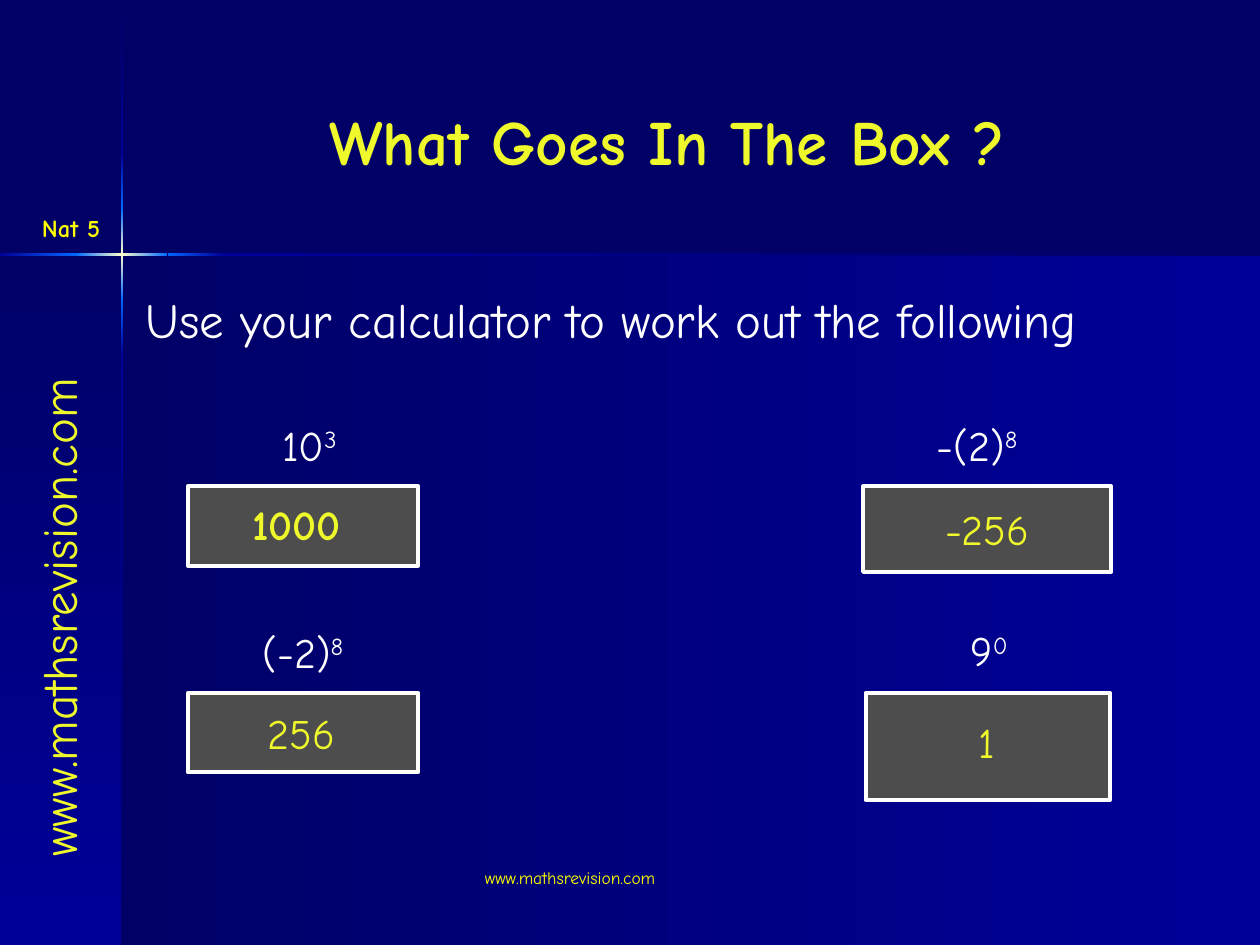
from copy import deepcopy

from pptx import Presentation, util as u
from pptx.dml.color import RGBColor
from pptx.enum import shapes, text
from pptx.oxml import ns

NAVY = RGBColor(0x00, 0x00, 0x66)
BLUE = RGBColor(0x00, 0x00, 0x99)
BRIGHT = RGBColor(0x00, 0x66, 0xFF)
CREAM = RGBColor(0xFF, 0xFF, 0xCC)
LEMON = RGBColor(0xEE, 0xF8, 0x2A)
YELLOW = RGBColor(0xFF, 0xFF, 0x00)
WHITE = RGBColor(0xFF, 0xFF, 0xFF)
GREY = RGBColor(0x4D, 0x4D, 0x4D)
ADDRESS = "www.mathsrevision.com"

deck = Presentation()
deck.slide_width, deck.slide_height = u.Inches(10), u.Inches(7.5)
page = deck.slides.add_slide(deck.slide_layouts[5])
page.background.fill.solid()
page.background.fill.fore_color.rgb = NAVY
CELL = deck.slide_width // 100  # grid of 100 columns by 75 rows


def place(*cells):
    return [round(cell * CELL) for cell in cells]


def write(words, cells=None, box=None, size=24, color=WHITE, bold=False,
          align=text.PP_ALIGN.CENTER, power=None):
    """Put a line of text, with an optional exponent, in a box."""
    box = box or page.shapes.add_textbox(*place(*cells))
    box.text_frame.word_wrap = True
    para = box.text_frame.paragraphs[0]
    para.alignment = align
    for part in filter(None, (words, power)):
        span = para.add_run()
        span.text = part
        span.font.name, span.font.size = "Comic Neue", u.Pt(size)
        span.font.bold, span.font.color.rgb = bold, color
        if part is power:
            span.font._element.set("baseline", "30000")
    return box


# Background panels, then the glowing cross; angles run counter-clockwise
RIGHT, DOWN = 0, 270
CROSS_X, CROSS_Y, THIN = 9.6, 20.1, 0.2
bands = [
    ((9.7, 20.2, 90.3, 54.8), RIGHT, (NAVY, BLUE)),
    ((0, 20.2, 9.7, 54.8), DOWN, (NAVY, BLUE)),
    ((CROSS_X, 0.1, THIN, 12), DOWN, (NAVY, BLUE)),
    ((CROSS_X, 28.2, THIN, 46.8), DOWN, (BLUE, NAVY)),
    ((17.7, CROSS_Y, 82.3, THIN), RIGHT, (BLUE, NAVY)),
    ((CROSS_X, 23.8, THIN, 4.4), DOWN, (BRIGHT, BLUE)),
    ((CROSS_X, 12.1, THIN, 4.4), DOWN, (BLUE, BRIGHT)),
    ((CROSS_X, 16.5, THIN, 7.3), DOWN, (BRIGHT, CREAM, BRIGHT)),
    ((0, CROSS_Y, 6.1, THIN), RIGHT, (BLUE, BRIGHT)),
    ((13.3, CROSS_Y, 4.4, THIN), RIGHT, (BRIGHT, BLUE)),
    ((6, CROSS_Y, 7.3, THIN), RIGHT, (BRIGHT, CREAM, BRIGHT)),
]
for cells, angle, colors in bands:
    band = page.shapes.add_shape(shapes.MSO_SHAPE.RECTANGLE, *place(*cells))
    band.shadow.inherit = False
    band.line.fill.background()
    band.fill.gradient()
    band.fill.gradient_angle = angle
    stops = band._element.spPr.find(".//" + ns.qn("a:gsLst"))
    for extra in colors[2:]:
        stops.append(deepcopy(stops[-1]))
    for index, (stop, color) in enumerate(zip(band.fill.gradient_stops, colors)):
        stop.position = index / (len(colors) - 1)
        stop.color.rgb = color

# Title and instruction
title = page.shapes.title
title.left, title.top, title.width, title.height = place(11.7, 3.3, 82.5, 15.7)
title.text_frame.vertical_anchor = text.MSO_ANCHOR.MIDDLE
write("What Goes In The Box ?", box=title, size=36, color=LEMON, bold=True)
write("Use your calculator to work out the following", (10.6, 22.5, 89.4, 5.7),
      size=28, align=text.PP_ALIGN.LEFT)

# Side strip and footer
write("Nat 5", (1.8, 16.4, 7.7, 3.4), size=14, color=YELLOW, bold=True)
side = write(ADDRESS, (-17.4, 44.1, 44, 5.7), size=28, color=LEMON,
             align=text.PP_ALIGN.LEFT)
side.rotation = 270
write(ADDRESS, (37.5, 68.3, 31.7, 5), size=10, color=YELLOW,
      align=text.PP_ALIGN.LEFT)

# Questions: power, its place, answer box, answer, its place, bold
questions = [
    ("10", "3", (15.5, 32.8, 18.1, 5), (14.9, 38.6, 18.3, 6.3),
     "1000", (15.3, 39.1, 16.5, 5), True),
    ("-(2)", "8", (68.1, 32.8, 18.9, 5), (68.5, 38.6, 19.7, 6.8),
     "-256", (70.5, 39.5, 15.7, 5), False),
    ("(-2)", "8", (15.7, 49.2, 16.7, 5), (14.9, 55, 18.3, 6.3),
     "256", (16.1, 55.7, 15.7, 5), False),
    ("9", "0", (67.6, 49.1, 21.8, 5), (68.7, 55, 19.4, 8.5),
     "1", (70.5, 56.4, 15.7, 5), False),
]
for base, power, label_cells, box_cells, answer, answer_cells, bold in questions:
    write(base, label_cells, power=power)
    box = page.shapes.add_shape(shapes.MSO_SHAPE.RECTANGLE, *place(*box_cells))
    box.shadow.inherit = False
    box.fill.solid()
    box.fill.fore_color.rgb = GREY
    box.line.color.rgb, box.line.width = WHITE, u.Pt(2.25)
    write(answer, answer_cells, color=LEMON, bold=bold)

deck.save("out.pptx")
